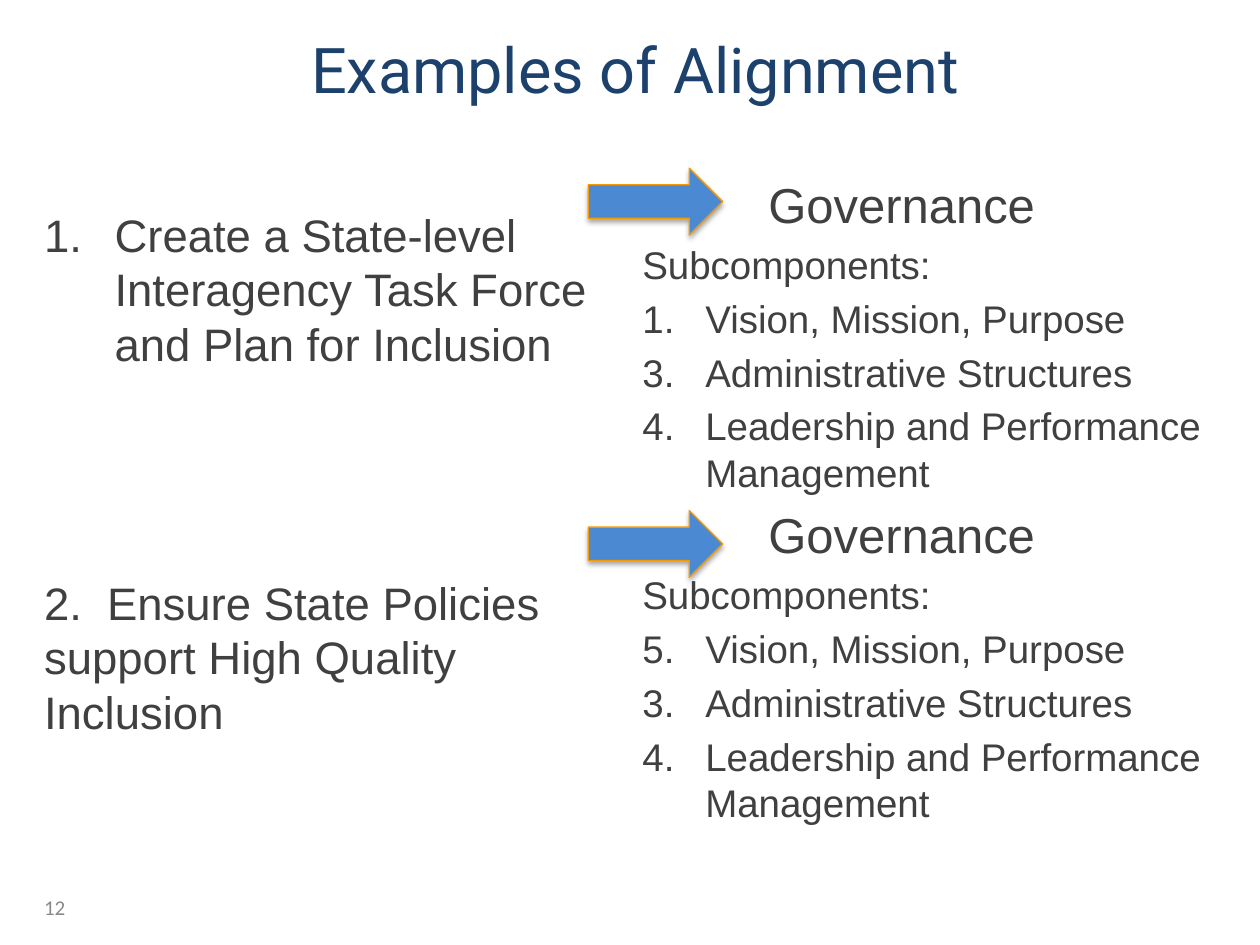
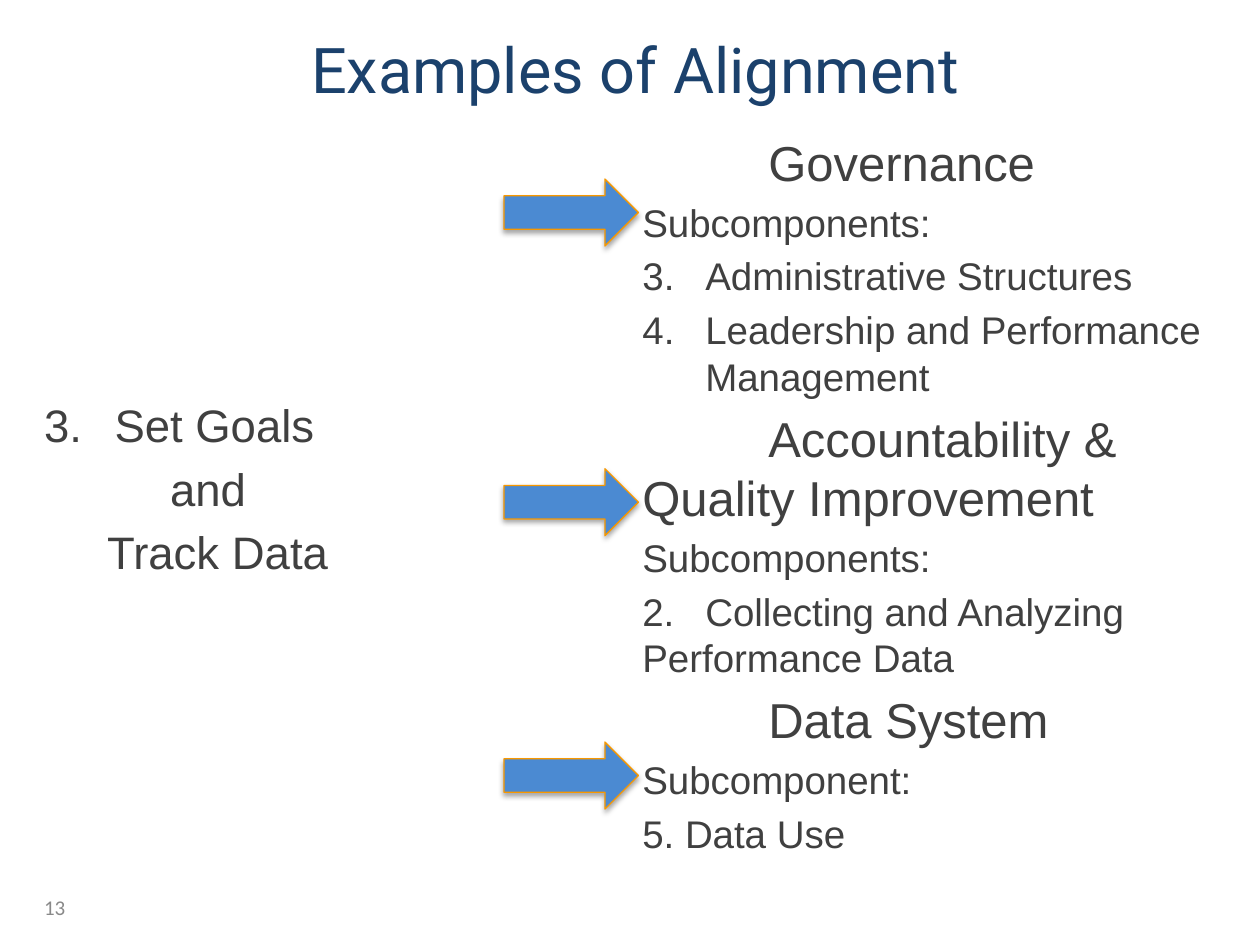
import pptx
import pptx.dml.color
import pptx.enum.shapes
import pptx.enum.text
import pptx.oxml
import pptx.oxml.ns
import pptx.util
from lxml import etree

Cm, Pt = pptx.util.Cm, pptx.util.Pt
ALIGN = pptx.enum.text.PP_ALIGN
ANCHOR = pptx.enum.text.MSO_ANCHOR

# Shared colours and sizes (cm)
NAVY, DARK, GREY, BLUE, ORANGE = "1B416C", "404040", "898989", "4B8AD2", "F89800"
ARROW_WIDTH, ARROW_HEIGHT = 2.71, 1.35
GOALS_LEFT, GOALS_WIDTH = 0.64, 11.86
PARTS_LEFT, PARTS_WIDTH = 12.7, 12.07

# Shared paragraph formats: indents in cm, sizes in points
HEADING = dict(size=28, first=2.54)
ITEM = dict(size=22)
GOAL = dict(size=26)
NUMBERED_ITEM = dict(size=22, margin=1.27, first=-1.27)
NUMBERED_GOAL = dict(size=26, margin=1.42, first=-1.42)

SHADOW = (
    '<a:effectLst xmlns:a="http://schemas.openxmlformats.org/drawingml/2006/main">'
    '<a:outerShdw blurRad="40000" dist="23000" dir="5400000" rotWithShape="0">'
    '<a:srgbClr val="000000"><a:alpha val="35000"/></a:srgbClr>'
    "</a:outerShdw></a:effectLst>"
)


def rgb(colour):
    return pptx.dml.color.RGBColor.from_string(colour)


def write(frame, text, size=22, font="Arial", colour=DARK, align=ALIGN.LEFT,
          margin=0, first=0, start=None, body=True):
    """Add one paragraph; the first one fills the empty paragraph of the frame."""
    is_first = not frame.text
    paragraph = frame.paragraphs[0] if is_first else frame.add_paragraph()
    paragraph.alignment = align
    if body:
        paragraph.line_spacing = Pt(round(size * 1.2, 1))
        paragraph.space_before = Pt(0 if is_first else round(size * 0.2, 1))
    properties = paragraph._p.get_or_add_pPr()
    properties.set("marL", str(Cm(margin)))
    properties.set("indent", str(Cm(first)))
    if start:
        number = etree.SubElement(properties, pptx.oxml.ns.qn("a:buAutoNum"),
                                  type="arabicPeriod")
        number.set("startAt", str(start))
    elif "\t" in text:
        tabs = etree.SubElement(properties, pptx.oxml.ns.qn("a:tabLst"))
        etree.SubElement(tabs, pptx.oxml.ns.qn("a:tab"), pos=str(Cm(1.27)), algn="l")
    run = paragraph.add_run()
    run.text = text
    run.font.size = Pt(size)
    run.font.name = font
    run.font.color.rgb = rgb(colour)


# Governance lists on the first slide; the numbering runs on in the second one
governance = [
    ("Governance", HEADING),
    ("Subcomponents:", ITEM),
    ("Vision, Mission, Purpose", dict(NUMBERED_ITEM, start=1)),
    ("Administrative Structures", dict(NUMBERED_ITEM, start=3)),
    ("Leadership and Performance Management", dict(NUMBERED_ITEM, start=3)),
]

# Each text block: left, top, width, height, paragraphs
slides = [
    dict(
        number="12",
        arrow_left=11.86,
        arrow_tops=[3.39, 10.29],
        blocks=[
            (GOALS_LEFT, 4.04, GOALS_WIDTH, 4, [
                ("Create a State-level Interagency Task Force and Plan for Inclusion",
                 dict(NUMBERED_GOAL, start=1)),
            ]),
            (GOALS_LEFT, 11.46, GOALS_WIDTH, 4, [
                ("2.\tEnsure State Policies support High Quality Inclusion", GOAL),
            ]),
            (PARTS_LEFT, 3.39, PARTS_WIDTH, 14.82, governance * 2),
        ],
    ),
    dict(
        number="13",
        arrow_left=10.16,
        arrow_tops=[3.61, 9.45, 14.96],
        blocks=[
            (GOALS_LEFT, 7.88, GOALS_WIDTH, 4.5, [
                ("Set Goals", dict(NUMBERED_GOAL, start=3)),
                ("and", dict(GOAL, first=2.54)),
                ("Track Data", dict(GOAL, first=1.27)),
            ]),
            (PARTS_LEFT, 2.54, PARTS_WIDTH, 15.66, governance[:2] + governance[3:] + [
                ("Accountability & Quality Improvement", HEADING),
                ("Subcomponents:", ITEM),
                ("2.\tCollecting and Analyzing Performance Data", ITEM),
                ("Data System", HEADING),
                ("Subcomponent:", ITEM),
                ("5. Data Use", ITEM),
            ]),
        ],
    ),
]

presentation = pptx.Presentation()
presentation.slide_width, presentation.slide_height = Cm(25.4), Cm(19.05)

for content in slides:
    slide = presentation.slides.add_slide(presentation.slide_layouts[6])

    # Title and slide number
    title = ("Examples of Alignment", dict(size=36, font="Roboto", colour=NAVY,
                                           align=ALIGN.CENTER, body=False))
    number = (content["number"], dict(size=12, font="Calibri", colour=GREY, body=False))
    labels = [(0.64, 0.43, 24.33, 1.9, [title]), (0.64, 17.78, 4.45, 1.02, [number])]

    # Arrows from goals to framework parts
    for top in content["arrow_tops"]:
        arrow = slide.shapes.add_shape(
            pptx.enum.shapes.MSO_SHAPE.RIGHT_ARROW,
            Cm(content["arrow_left"]), Cm(top), Cm(ARROW_WIDTH), Cm(ARROW_HEIGHT))
        arrow.fill.solid()
        arrow.fill.fore_color.rgb = rgb(BLUE)
        arrow.line.color.rgb = rgb(ORANGE)
        arrow.line.width = Pt(0.75)
        arrow._element.spPr.append(pptx.oxml.parse_xml(SHADOW))

    # All text: labels are centred vertically, goals and parts start at the top
    for block in labels + content["blocks"]:
        left, top, width, height, paragraphs = block
        frame = slide.shapes.add_textbox(
            Cm(left), Cm(top), Cm(width), Cm(height)).text_frame
        frame.word_wrap = True
        frame.vertical_anchor = ANCHOR.MIDDLE if block in labels else ANCHOR.TOP
        for text, style in paragraphs:
            write(frame, text, **style)

presentation.save("out.pptx")
